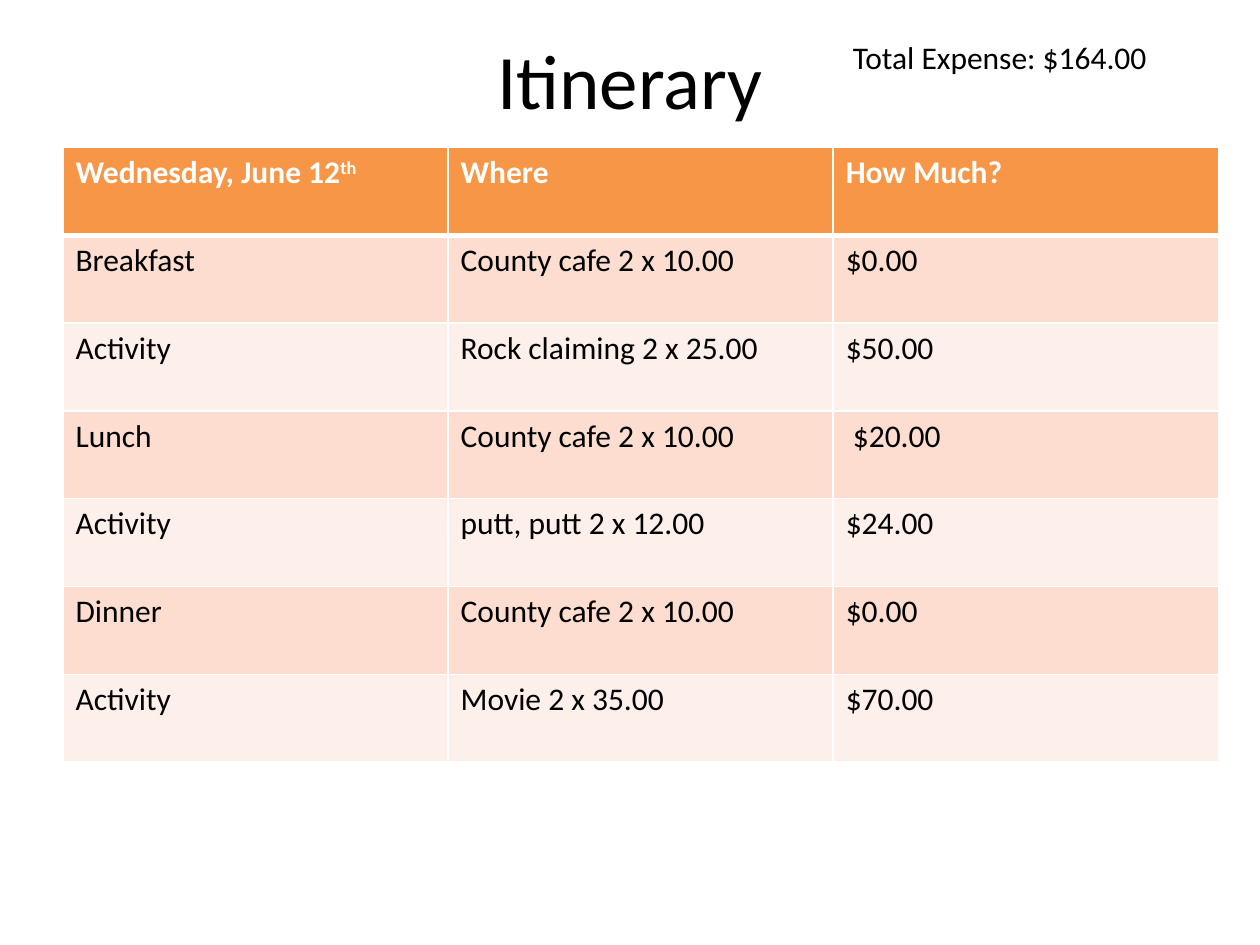
from pptx import Presentation
from pptx.dml.color import RGBColor
from pptx.enum.text import MSO_ANCHOR, PP_ALIGN
from pptx.oxml.ns import qn
from pptx.util import Inches, Pt
from lxml.etree import SubElement

FONT = "Calibri"
BLACK = RGBColor(0x00, 0x00, 0x00)
WHITE = RGBColor(0xFF, 0xFF, 0xFF)
ORANGE = RGBColor(0xF7, 0x96, 0x46)
PEACH = RGBColor(0xFC, 0xDD, 0xCF)
PALE_PEACH = RGBColor(0xFD, 0xEF, 0xE9)

HEADINGS = ("Wednesday, June 12", "Where", "How Much?")
PLANS = (
    ("Breakfast", "County cafe 2 x 10.00", "$0.00"),
    ("Activity", "Rock claiming 2 x 25.00", "$50.00"),
    ("Lunch", "County cafe 2 x 10.00", " $20.00"),
    ("Activity", "putt, putt 2 x 12.00", "$24.00"),
    ("Dinner", "County cafe 2 x 10.00", "$0.00"),
    ("Activity", "Movie 2 x 35.00", "$70.00"),
)


def format_run(run, size, color, bold=False):
    """Give a run its font, size, colour and weight."""
    run.font.name = FONT
    run.font.size = Pt(size)
    run.font.color.rgb = color
    run.font.bold = bold


def add_title(slide, wording):
    """Place and format the slide title."""
    title = slide.shapes.title
    title.left, title.top = Inches(0.5), Inches(0)
    title.width, title.height = Inches(9), Inches(1.25)
    title.text_frame.text = wording
    title.text_frame.vertical_anchor = MSO_ANCHOR.MIDDLE
    heading = title.text_frame.paragraphs[0]
    heading.alignment = PP_ALIGN.CENTER
    format_run(heading.runs[0], 44, BLACK)


def add_total(slide, wording):
    """Add the total expense beside the title."""
    total = slide.shapes.add_textbox(Inches(6.67), Inches(0.25), Inches(3.08), Inches(0.4))
    total.text_frame.word_wrap = True
    total.text_frame.text = wording
    format_run(total.text_frame.paragraphs[0].runs[0], 18, BLACK)


def set_borders(cell, top_width, bottom_width):
    """Draw white lines on all four sides of a cell."""
    properties = cell._tc.get_or_add_tcPr()
    widths = {"a:lnL": 1, "a:lnR": 1, "a:lnT": top_width, "a:lnB": bottom_width}
    for side, width in widths.items():
        line = SubElement(properties, qn(side), w=str(Pt(width)))
        fill = SubElement(line, qn("a:solidFill"))
        SubElement(fill, qn("a:srgbClr"), val=str(WHITE))


def fill_cell(cell, wording, row):
    """Write and style one itinerary cell according to its row."""
    is_heading = row == 0
    set_borders(cell, 3 if row == 1 else 1, 3 if is_heading else 1)
    cell.fill.solid()
    cell.fill.fore_color.rgb = ORANGE if is_heading else PEACH if row % 2 else PALE_PEACH
    cell.text_frame.text = wording
    format_run(cell.text_frame.paragraphs[0].runs[0], 18, WHITE if is_heading else BLACK, is_heading)


def add_ordinal(cell, suffix):
    """Append a superscript ordinal suffix to a heading."""
    ordinal = cell.text_frame.paragraphs[0].add_run()
    ordinal.text = suffix
    format_run(ordinal, 18, WHITE, True)
    ordinal.font._element.set("baseline", "30000")


def add_itinerary(slide):
    """Add the table of the day's plans and their costs."""
    rows = (HEADINGS, *PLANS)
    itinerary = slide.shapes.add_table(
        len(rows), len(HEADINGS), Inches(0.5), Inches(1.17), Inches(9.17), Inches(4.88)
    ).table
    for row, wordings in enumerate(rows):
        for column, wording in enumerate(wordings):
            fill_cell(itinerary.cell(row, column), wording, row)
    add_ordinal(itinerary.cell(0, 0), "th")


def main():
    """Build and save the itinerary slide."""
    presentation = Presentation()
    presentation.slide_width, presentation.slide_height = Inches(10), Inches(7.5)
    slide = presentation.slides.add_slide(presentation.slide_layouts[5])
    add_title(slide, "Itinerary")
    add_total(slide, "Total Expense: $164.00")
    add_itinerary(slide)
    presentation.save("out.pptx")


if __name__ == "__main__":
    main()
